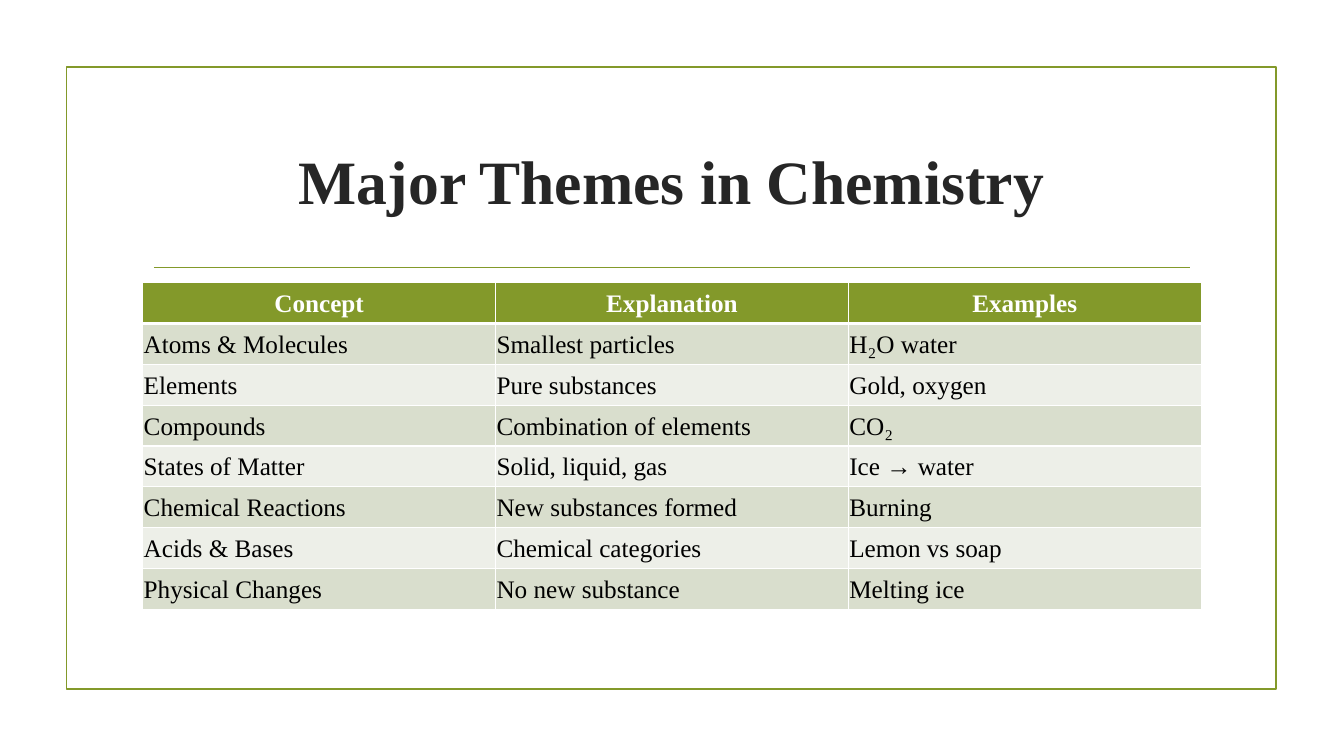
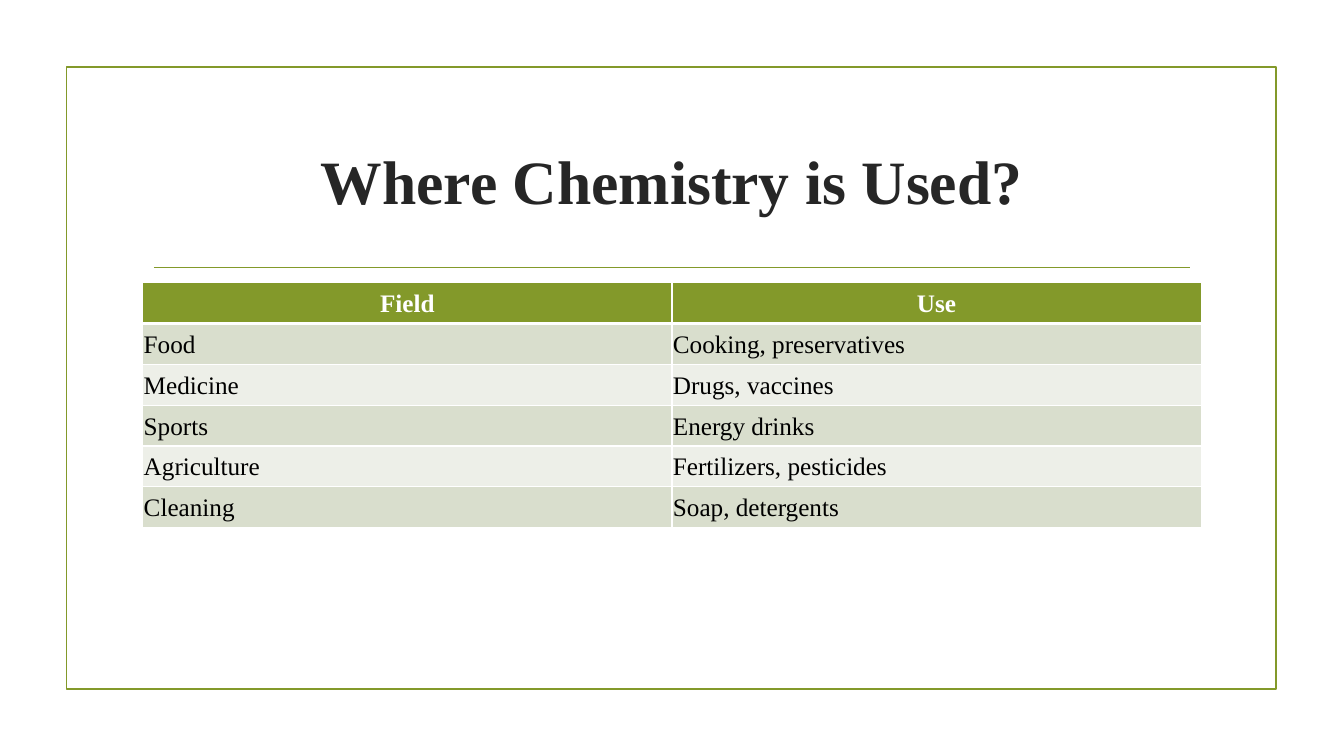
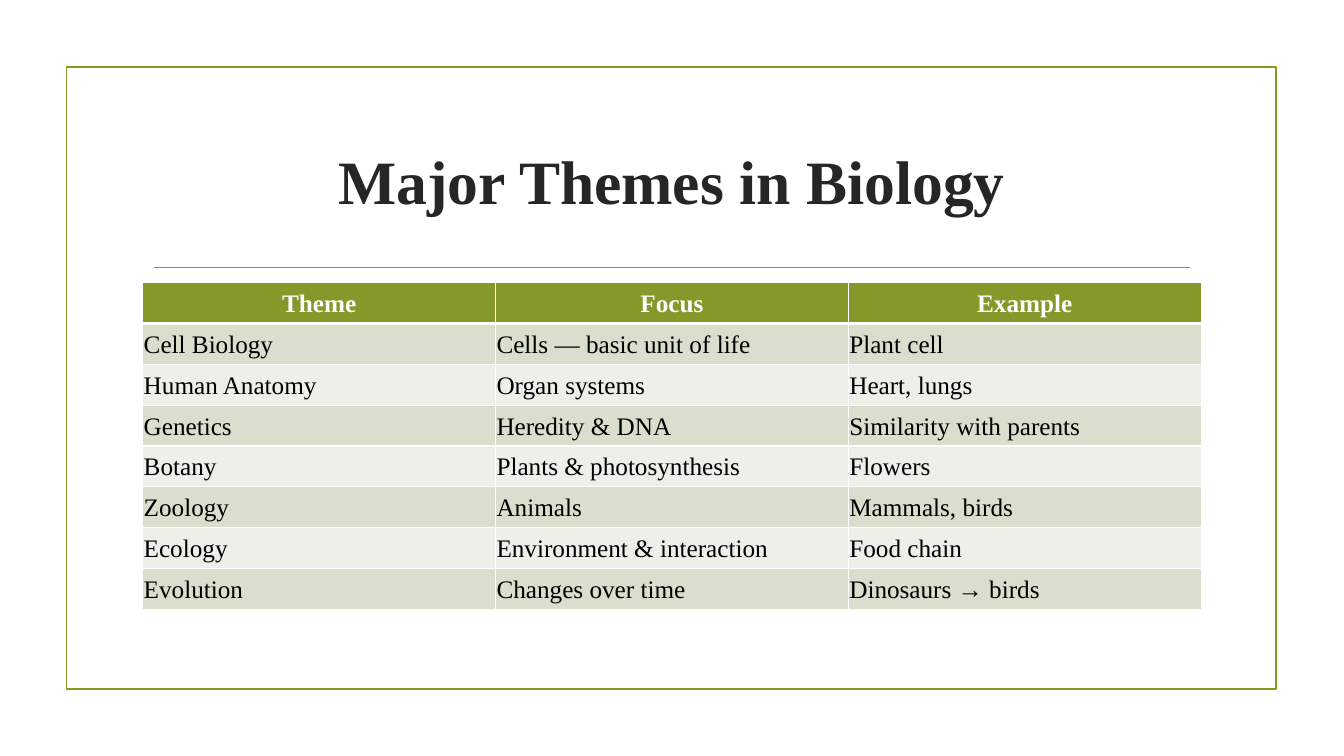
"""Build three science overview slides, each a framed title above a banded table."""
from lxml import etree
from pptx import Presentation
from pptx.dml.color import RGBColor
from pptx.enum.shapes import MSO_CONNECTOR, MSO_SHAPE
from pptx.enum.text import MSO_ANCHOR, PP_ALIGN
from pptx.oxml.ns import qn
from pptx.util import Pt

RECTANGLE = MSO_SHAPE.RECTANGLE
STRAIGHT = MSO_CONNECTOR.STRAIGHT
MIDDLE = MSO_ANCHOR.MIDDLE
CENTER, LEFT = PP_ALIGN.CENTER, PP_ALIGN.LEFT

GREEN = RGBColor(0x83, 0x99, 0x2A)
DARK_BAND = RGBColor(0xD9, 0xDE, 0xCD)
LIGHT_BAND = RGBColor(0xED, 0xEF, 0xE8)
TITLE_GREY = RGBColor(0x26, 0x26, 0x26)
WHITE = RGBColor(0xFF, 0xFF, 0xFF)
BLACK = RGBColor(0, 0, 0)

FONT = "Times New Roman"
CONTENT_X, CONTENT_W = 102, 756
TABLE_Y, ROW_H = 201.8, 29.2
RULE_X1, RULE_X2, RULE_Y = 110, 850, 191
CELL_INSET = 0.7
THIN, THICK = 1, 3

SLIDES = [
    ("Major Themes in Chemistry", [
        ("Concept", "Explanation", "Examples"),
        ("Atoms & Molecules", "Smallest particles", "H₂O water"),
        ("Elements", "Pure substances", "Gold, oxygen"),
        ("Compounds", "Combination of elements", "CO₂"),
        ("States of Matter", "Solid, liquid, gas", "Ice → water"),
        ("Chemical Reactions", "New substances formed", "Burning"),
        ("Acids & Bases", "Chemical categories", "Lemon vs soap"),
        ("Physical Changes", "No new substance", "Melting ice"),
    ]),
    ("Where Chemistry is Used?", [
        ("Field", "Use"),
        ("Food", "Cooking, preservatives"),
        ("Medicine", "Drugs, vaccines"),
        ("Sports", "Energy drinks"),
        ("Agriculture", "Fertilizers, pesticides"),
        ("Cleaning", "Soap, detergents"),
    ]),
    ("Major Themes in Biology", [
        ("Theme", "Focus", "Example"),
        ("Cell Biology", "Cells — basic unit of life", "Plant cell"),
        ("Human Anatomy", "Organ systems", "Heart, lungs"),
        ("Genetics", "Heredity & DNA", "Similarity with parents"),
        ("Botany", "Plants & photosynthesis", "Flowers"),
        ("Zoology", "Animals", "Mammals, birds"),
        ("Ecology", "Environment & interaction", "Food chain"),
        ("Evolution", "Changes over time", "Dinosaurs → birds"),
    ]),
]


def set_font(p, size, color, bold):
    p.font.name = FONT
    p.font.size = Pt(size)
    p.font.color.rgb = color
    p.font.bold = bold


def add_frame(s):
    frame = s.shapes.add_shape(RECTANGLE, Pt(47.5), Pt(48), Pt(864), Pt(444))
    frame.shadow.inherit = False
    frame.fill.background()
    rule = s.shapes.add_connector(STRAIGHT, Pt(RULE_X1), Pt(RULE_Y), Pt(RULE_X2), Pt(RULE_Y))
    etree.SubElement(rule._element.spPr, qn("a:effectLst"))
    for sp in (frame, rule):
        sp.line.color.rgb = GREEN
        sp.line.width = Pt(1.25)


def add_title(s, text):
    tf = s.shapes.add_textbox(Pt(CONTENT_X), Pt(77), Pt(CONTENT_W), Pt(103)).text_frame
    tf.word_wrap = True
    tf.vertical_anchor = MIDDLE
    p = tf.paragraphs[0]
    p.text = text
    p.alignment = CENTER
    set_font(p, 44, TITLE_GREY, True)


def set_borders(cell, top, bottom):
    tc_pr = cell._tc.get_or_add_tcPr()
    for side, width in (("L", THIN), ("R", THIN), ("T", top), ("B", bottom)):
        ln = etree.SubElement(tc_pr, qn(f"a:ln{side}"), w=str(Pt(width)))
        fill = etree.SubElement(ln, qn("a:solidFill"))
        etree.SubElement(fill, qn("a:srgbClr"), val=str(WHITE))


def fill_cell(cell, text, row):
    header = row == 0
    set_borders(cell, THICK if row == 1 else THIN, THICK if header else THIN)
    cell.fill.solid()
    cell.fill.fore_color.rgb = GREEN if header else DARK_BAND if row % 2 else LIGHT_BAND
    cell.margin_left = cell.margin_right = Pt(CELL_INSET)
    cell.margin_top = cell.margin_bottom = Pt(CELL_INSET)
    cell.vertical_anchor = MIDDLE
    p = cell.text_frame.paragraphs[0]
    p.text = text
    p.alignment = CENTER if header else LEFT
    p.line_spacing = 1.07
    set_font(p, 18, WHITE if header else BLACK, header)


def add_grid(s, rows):
    n_rows, n_cols = len(rows), len(rows[0])
    table = s.shapes.add_table(n_rows, n_cols, Pt(CONTENT_X), Pt(TABLE_Y),
                               Pt(CONTENT_W), Pt(ROW_H * n_rows)).table
    for column in table.columns:
        column.width = Pt(CONTENT_W / n_cols)
    for r, texts in enumerate(rows):
        table.rows[r].height = Pt(ROW_H)
        for c, text in enumerate(texts):
            fill_cell(table.cell(r, c), text, r)


def main():
    prs = Presentation()
    prs.slide_width, prs.slide_height = Pt(960), Pt(540)
    for title, rows in SLIDES:
        s = prs.slides.add_slide(prs.slide_layouts[6])
        add_frame(s)
        add_title(s, title)
        add_grid(s, rows)
    prs.save("out.pptx")


if __name__ == "__main__":
    main()
